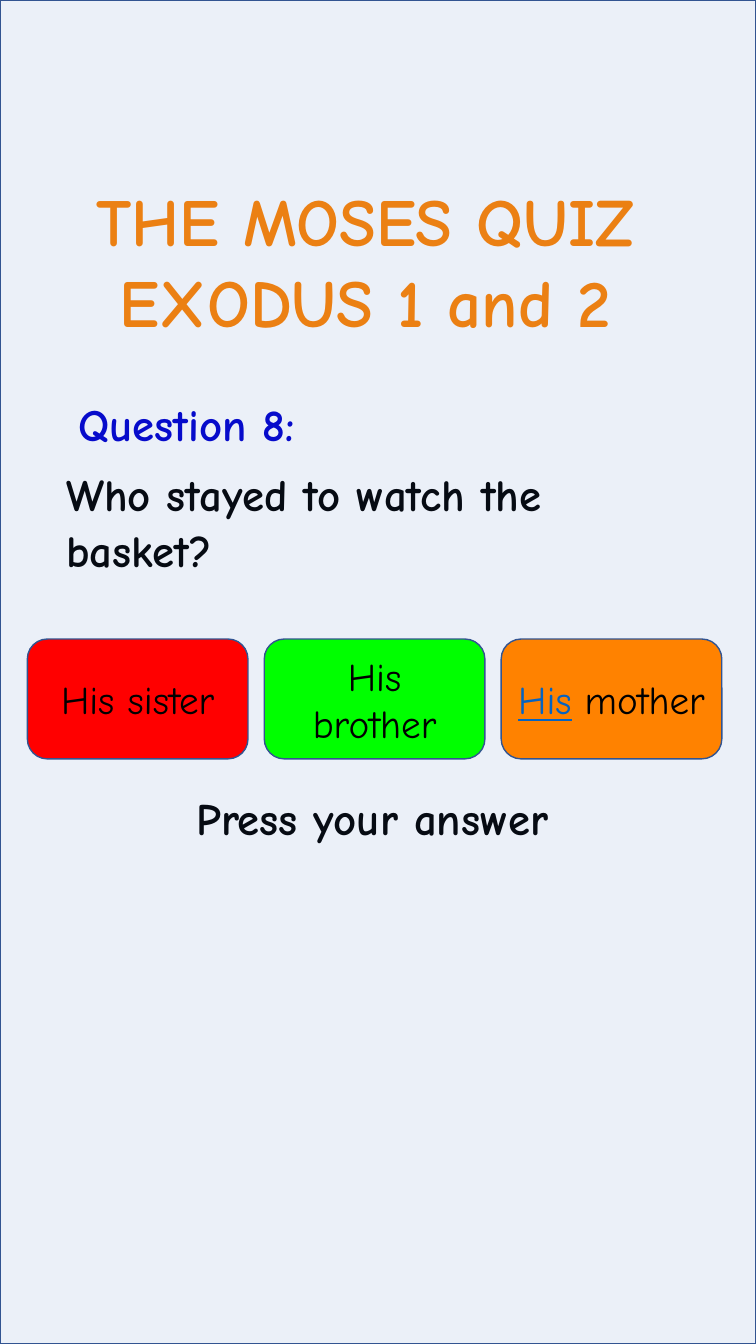
from lxml.etree import SubElement
from pptx import Presentation
from pptx.dml.color import RGBColor
from pptx.enum.shapes import MSO_SHAPE
from pptx.enum.text import MSO_ANCHOR, MSO_AUTO_SIZE, PP_ALIGN
from pptx.oxml.ns import qn
from pptx.util import Cm, Pt

FONT = "Comic Neue"
ORANGE = RGBColor(0xFF, 0x82, 0x00)
RED = RGBColor(0xFF, 0x00, 0x00)
GREEN = RGBColor(0x00, 0xFF, 0x00)
QUESTION_BLUE = RGBColor(0x00, 0x00, 0xCC)
LINK_BLUE = RGBColor(0x05, 0x63, 0xC1)
TINT_BLUE = RGBColor(0x44, 0x72, 0xC4)
BORDER_BLUE = RGBColor(0x32, 0x54, 0x91)
BLACK = RGBColor(0x00, 0x00, 0x00)

PAGE_WIDTH, PAGE_HEIGHT = Cm(19.05), Cm(33.86)


def style_paragraph(para, size, color, bold=False, align=PP_ALIGN.LEFT):
    """Set the font and alignment of a paragraph."""
    para.alignment = align
    para.font.name = FONT
    para.font.size = Pt(size)
    para.font.bold = bold
    para.font.color.rgb = color


def add_heading(page, box, lines, size, color):
    """Add centred bold lines in an unwrapped box that fits its text."""
    frame = page.shapes.add_textbox(*box).text_frame
    frame.word_wrap = False
    frame.auto_size = MSO_AUTO_SIZE.SHAPE_TO_FIT_TEXT
    frame.text = "\n".join(lines)
    for para in frame.paragraphs:
        style_paragraph(para, size, color, True, PP_ALIGN.CENTER)


def add_body(page, box, text, line_spacing):
    """Add a wrapped bold black paragraph."""
    frame = page.shapes.add_textbox(*box).text_frame
    frame.word_wrap = True
    frame.text = text
    para = frame.paragraphs[0]
    style_paragraph(para, 32, BLACK, True)
    para.line_spacing = line_spacing
    para.space_before = Pt(7.5)


def add_panel(page, box, kind, color):
    """Add a filled shape with a thin blue border."""
    panel = page.shapes.add_shape(kind, *box)
    panel.shadow.inherit = False
    panel.fill.solid()
    panel.fill.fore_color.rgb = color
    panel.line.color.rgb = BORDER_BLUE
    panel.line.width = Pt(1)
    return panel


def add_tint(page, box):
    """Lay a ten percent blue tint over the box."""
    tint = add_panel(page, box, MSO_SHAPE.RECTANGLE, TINT_BLUE)
    color = tint.fill._xPr.find(qn("a:solidFill"))[0]
    SubElement(color, qn("a:alpha"), val="10000")


def add_answers(page, box, answers):
    """Add a row of answer buttons, each a colour and its coloured words."""
    left, top, width, height = box
    button_width = Cm(5.56)
    pitch = (width - button_width) // (len(answers) - 1)
    for index, (fill, spans) in enumerate(answers):
        place = (left + index * pitch, top, button_width, height)
        button = add_panel(page, place, MSO_SHAPE.ROUNDED_RECTANGLE, fill)
        frame = button.text_frame
        frame.word_wrap = True
        frame.vertical_anchor = MSO_ANCHOR.MIDDLE
        para = frame.paragraphs[0]
        style_paragraph(para, 28, BLACK, align=PP_ALIGN.CENTER)
        for text, color in spans:
            span = para.add_run()
            span.text = text
            span.font.color.rgb = color
            span.font.underline = color == LINK_BLUE


def add_quiz_page(page, box):
    """Place the title, question, tint and answers of a quiz page."""
    left, top, width, height = box

    def inside(x, y, wide, high):
        """Turn centimetres within the page box into a position and size."""
        return left + Cm(x), top + Cm(y), Cm(wide), Cm(high)

    title = ["THE MOSES QUIZ ", "EXODUS 1 and 2 "]
    add_heading(page, inside(0.76, 4.39, 17.5, 4.37), title, 48, ORANGE)
    add_heading(page, inside(1.19, 9.88, 7.04, 1.63), ["Question 8:"], 32, QUESTION_BLUE)
    add_body(page, inside(1.42, 11.58, 16.15, 3.71), "Who stayed to watch the basket?", Pt(40))
    add_body(page, inside(4.7, 19.96, 10.72, 1.83), "Press your answer", 0.9)
    add_tint(page, box)
    add_answers(page, inside(0.69, 16.1, 17.5, 3.02), [
        (RED, [("His sister", BLACK)]),
        (GREEN, [("His brother", BLACK)]),
        (ORANGE, [("His", LINK_BLUE), (" mother", BLACK)]),
    ])


def main():
    """Build and save the deck."""
    deck = Presentation()
    deck.slide_width, deck.slide_height = PAGE_WIDTH, PAGE_HEIGHT
    page = deck.slides.add_slide(deck.slide_layouts[6])
    add_quiz_page(page, (0, 0, PAGE_WIDTH, PAGE_HEIGHT))
    deck.save("out.pptx")


if __name__ == "__main__":
    main()
